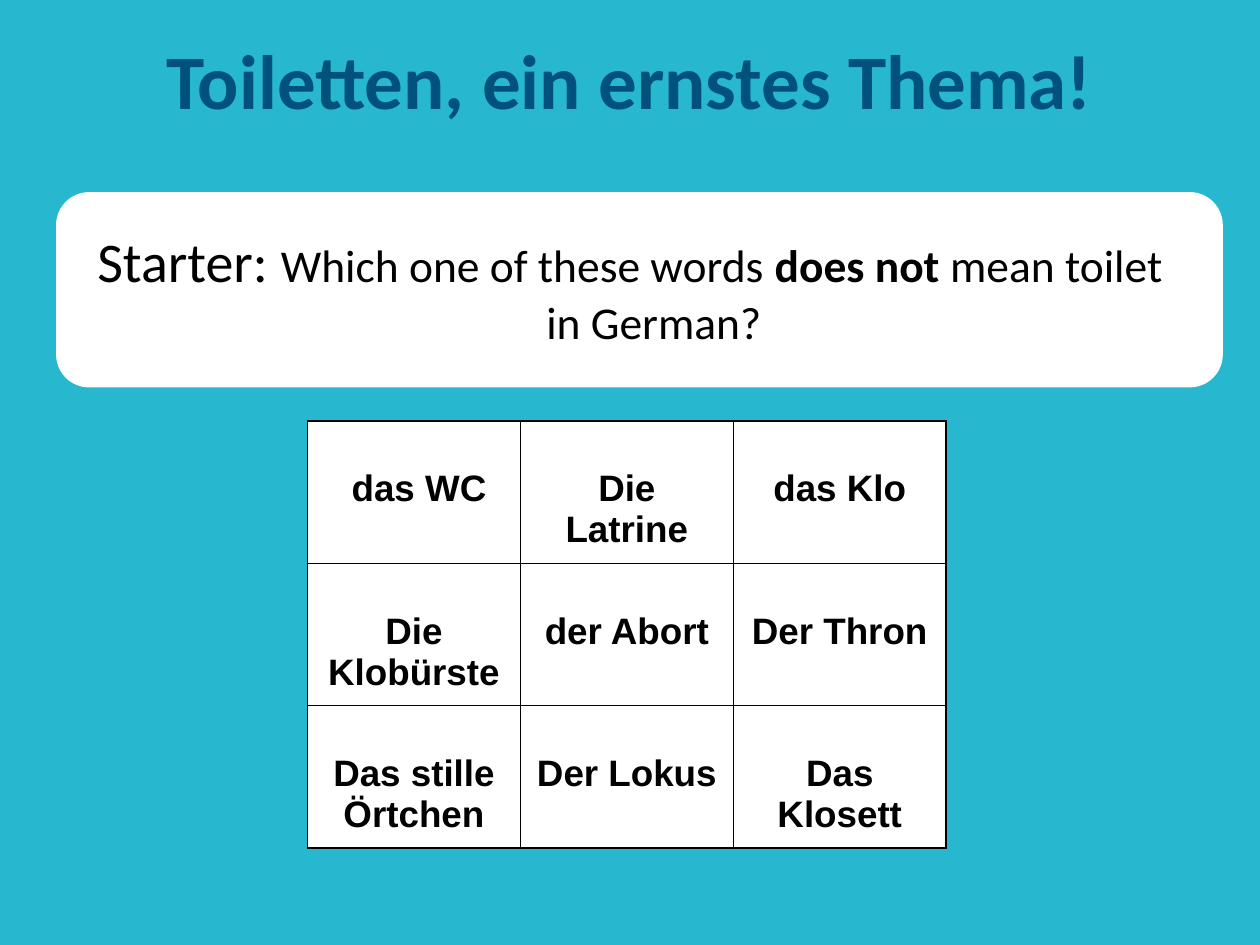
from lxml.etree import SubElement
from pptx import Presentation
from pptx.dml.color import RGBColor
from pptx.enum.shapes import MSO_SHAPE
from pptx.enum.text import MSO_ANCHOR, PP_ALIGN
from pptx.oxml.ns import qn
from pptx.util import Inches, Pt

COLORS = {"background": "27B8CF", "panel": "FFFFFF", "title": "00527D", "text": "000000"}
TITLE = [("Toiletten, ein ernstes Thema!", 44, True)]
STARTER = [
    ("Starter: ", 32, False),
    ("Which one of these words ", 26, False),
    ("does not ", 26, True),
    ("mean toilet in German?", 26, False),
]
WORDS = [
    [" das WC", "Die Latrine", "das Klo"],
    ["Die Klobürste", "der Abort", "Der Thron"],
    ["Das stille Örtchen", "Der Lokus", "Das Klosett"],
]
COL_WIDTH, ROW_HEIGHT = 1.69, 1.12


def rgb(name):
    return RGBColor.from_string(COLORS[name])


def write(tf, runs, font, color):
    p = tf.paragraphs[0]
    p.alignment = PP_ALIGN.CENTER
    for text, size, bold in runs:
        r = p.add_run()
        r.text = text
        r.font.name = font
        r.font.size = Pt(size)
        r.font.bold = bold
        r.font.color.rgb = rgb(color)
    return p


def add_text(slide, box, runs, color, anchor):
    tf = slide.shapes.add_textbox(*map(Inches, box)).text_frame
    tf.word_wrap = True
    tf.vertical_anchor = anchor
    return write(tf, runs, "Calibri", color)


def add_borders(cell):
    tc_pr = cell._tc.get_or_add_tcPr()
    for i, side in enumerate(("lnL", "lnR", "lnT", "lnB")):
        ln = tc_pr.makeelement(qn(f"a:{side}"), {"w": str(Pt(1))})
        fill = SubElement(ln, qn("a:solidFill"))
        SubElement(fill, qn("a:srgbClr"), val=COLORS["text"])
        tc_pr.insert(i, ln)


def add_word_grid(slide):
    rows, cols = len(WORDS), len(WORDS[0])
    size = (Inches(cols * COL_WIDTH), Inches(rows * ROW_HEIGHT))
    table = slide.shapes.add_table(rows, cols, Inches(2.44), Inches(3.34), *size).table
    for col in table.columns:
        col.width = Inches(COL_WIDTH)
    for row, words in zip(table.rows, WORDS):
        row.height = Inches(ROW_HEIGHT)
        for cell, word in zip(row.cells, words):
            cell.margin_top = Inches(0.38)
            cell.fill.solid()
            cell.fill.fore_color.rgb = rgb("panel")
            add_borders(cell)
            write(cell.text_frame, [(word, 21, True)], "Arial", "text")


def main():
    prs = Presentation()
    prs.slide_width, prs.slide_height = Inches(10), Inches(7.5)
    slide = prs.slides.add_slide(prs.slide_layouts[6])
    slide.background.fill.solid()
    slide.background.fill.fore_color.rgb = rgb("background")

    box = map(Inches, (0.45, 1.53, 9.25, 1.54))
    panel = slide.shapes.add_shape(MSO_SHAPE.ROUNDED_RECTANGLE, *box)
    panel.shadow.inherit = False
    panel.fill.solid()
    panel.fill.fore_color.rgb = rgb("panel")
    panel.line.color.rgb = rgb("panel")
    panel.line.width = Pt(0.75)

    add_text(slide, (0.5, 0, 9, 1.25), TITLE, "title", MSO_ANCHOR.MIDDLE)
    p = add_text(slide, (0.5, 1.75, 9, 4.95), STARTER, "text", MSO_ANCHOR.TOP)
    p_pr = p._p.get_or_add_pPr()
    p_pr.set("marL", str(Inches(0.38)))
    p_pr.set("indent", str(Inches(-0.38)))
    add_word_grid(slide)
    prs.save("out.pptx")


if __name__ == "__main__":
    main()
